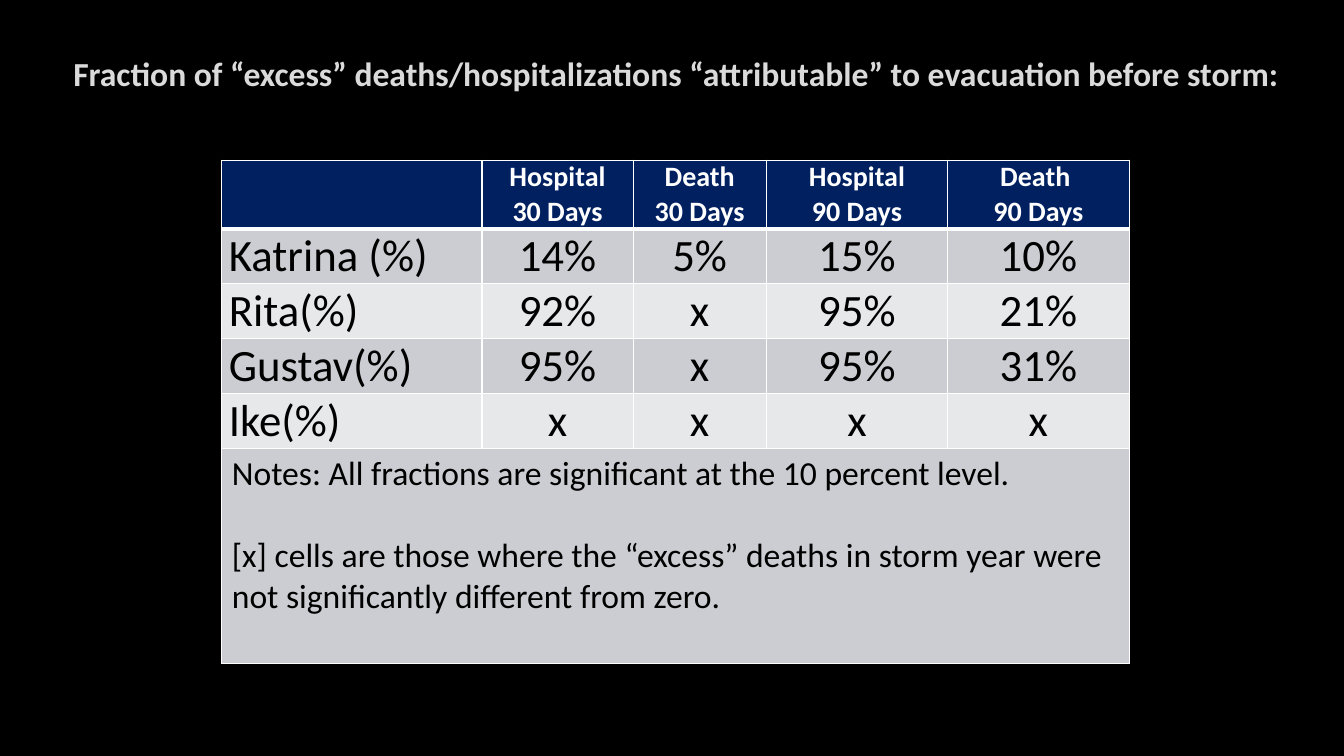
from lxml.etree import SubElement
from pptx import Presentation
from pptx.dml.color import RGBColor
from pptx.enum.text import MSO_ANCHOR, PP_ALIGN
from pptx.oxml.ns import qn
from pptx.util import Inches, Pt

COLORS = {
    "background": "000000",
    "title": "DADADA",
    "outline": "404040",
    "header": "002060",
    "white": "FFFFFF",
    "text": "000000",
    "odd": "CCCDD2",
    "even": "E7E8EA",
}
HEADERS = ["", "Hospital\n30 Days", "Death\n30 Days", "Hospital\n90 Days", "Death \n90 Days"]
STORMS = [
    ["Katrina (%)", "14%", "5%", "15%", "10%"],
    ["Rita(%)", "92%", "x", "95%", "21%"],
    ["Gustav(%)", "95%", "x", "95%", "31%"],
    ["Ike(%)", "x", "x", "x", "x"],
]
NOTES = (
    "Notes: All fractions are significant at the 10 percent level.\n"
    "[x] cells are those where the “excess” deaths in storm year were "
    "not significantly different from zero."
)
COLUMN_WIDTHS = [2.58, 1.5, 1.32, 1.8, 1.8]
ROW_HEIGHTS = [0.68] + [0.545] * len(STORMS) + [2.13]


def write_text(frame, text, size=32, color="text", bold=False,
               align=PP_ALIGN.LEFT, gap=0, font="Calibri"):
    for index, line in enumerate(text.split("\n")):
        paragraph = frame.add_paragraph() if index else frame.paragraphs[0]
        paragraph.alignment = align
        if index and gap:
            paragraph.space_before = Pt(gap)
        run = paragraph.add_run()
        run.text = line
        run.font.name = font
        run.font.size = Pt(size)
        run.font.bold = bold
        run.font.color.rgb = RGBColor.from_string(COLORS[color])


def add_line(parent, tag, color, width, opacity=100):
    line = SubElement(parent, qn(tag), w=str(Pt(width)))
    fill = SubElement(line, qn("a:solidFill"))
    shade = SubElement(fill, qn("a:srgbClr"), val=COLORS[color])
    if opacity < 100:
        SubElement(shade, qn("a:alpha"), val=str(opacity * 1000))
    return line


class SlideBuilder:
    def __init__(self, presentation):
        self.slide = presentation.slides.add_slide(presentation.slide_layouts[6])
        fill = self.slide.background.fill
        fill.solid()
        fill.fore_color.rgb = RGBColor.from_string(COLORS["background"])

    def title(self, text, left, top, width, height):
        shape = self.slide.shapes.add_textbox(
            Inches(left), Inches(top), Inches(width), Inches(height))
        frame = shape.text_frame
        frame.word_wrap = True
        frame.vertical_anchor = MSO_ANCHOR.MIDDLE
        write_text(frame, text, size=24, color="title", bold=True, align=PP_ALIGN.CENTER)
        properties = frame.paragraphs[0].runs[0].font._element
        properties.insert(0, add_line(properties, "a:ln", "outline", 0.75, opacity=10))

    def table(self, left, top, widths, heights):
        shape = self.slide.shapes.add_table(
            len(heights), len(widths), Inches(left), Inches(top),
            Inches(sum(widths)), Inches(sum(heights)))
        table = shape.table
        for column, width in zip(table.columns, widths):
            column.width = Inches(width)
        for row, height in zip(table.rows, heights):
            row.height = Inches(height)
        return table

    def cell(self, cell, fill, top=1, bottom=1):
        properties = cell._tc.get_or_add_tcPr()
        for side, width in zip("LRTB", (1, 1, top, bottom)):
            add_line(properties, "a:ln" + side, "white", width)
        cell.fill.solid()
        cell.fill.fore_color.rgb = RGBColor.from_string(COLORS[fill])

    def value(self, cell, text, **style):
        cell.margin_left = cell.margin_right = Inches(0.07)
        cell.margin_top = cell.margin_bottom = 0
        if text:
            write_text(cell.text_frame, text, **style)

    def storm_table(self, left, top):
        table = self.table(left, top, COLUMN_WIDTHS, ROW_HEIGHTS)
        last_row = len(ROW_HEIGHTS) - 1
        for row in range(len(ROW_HEIGHTS)):
            fill = "header" if row == 0 else ("odd" if row % 2 else "even")
            for column in range(len(COLUMN_WIDTHS)):
                self.cell(table.cell(row, column), fill,
                          top=3 if row == 1 else 1, bottom=3 if row == 0 else 1)
        for column, text in enumerate(HEADERS):
            self.value(table.cell(0, column), text, size=20, color="white",
                       bold=True, align=PP_ALIGN.CENTER)
        for row, storm in enumerate(STORMS, start=1):
            for column, text in enumerate(storm):
                cell = table.cell(row, column)
                if column:
                    cell.vertical_anchor = MSO_ANCHOR.MIDDLE
                self.value(cell, text, align=PP_ALIGN.CENTER if column else PP_ALIGN.LEFT)
        notes = table.cell(last_row, 0)
        notes.merge(table.cell(last_row, len(COLUMN_WIDTHS) - 1))
        write_text(notes.text_frame, NOTES, size=24, gap=29.3)


def main():
    presentation = Presentation()
    presentation.slide_width = Inches(13.33)
    presentation.slide_height = Inches(7.5)
    builder = SlideBuilder(presentation)
    builder.title(
        "Fraction of “excess” deaths/hospitalizations “attributable” to evacuation before storm:",
        0.26, 0, 12.89, 1.45)
    builder.storm_table(2.2, 1.59)
    presentation.save("out.pptx")


if __name__ == "__main__":
    main()
